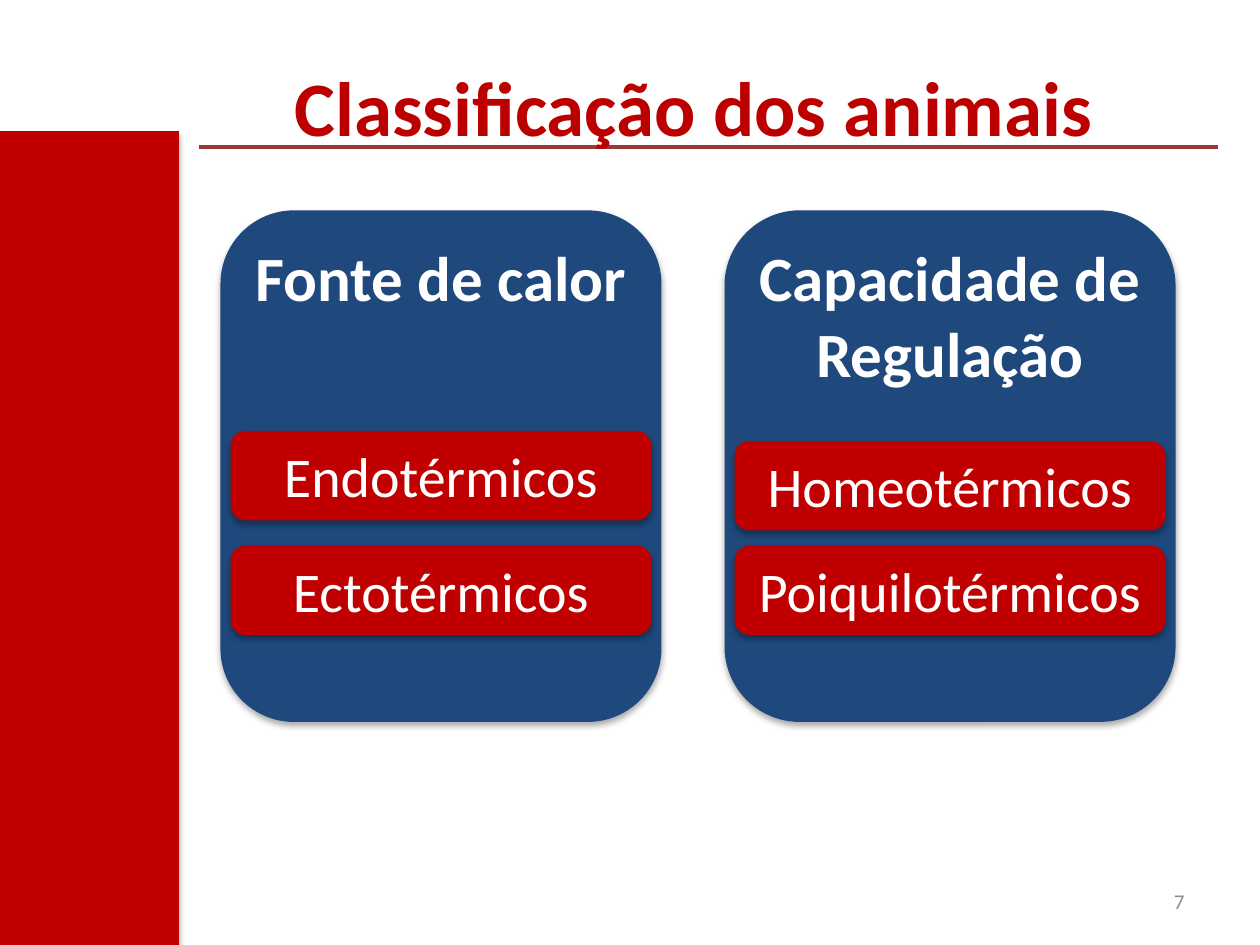
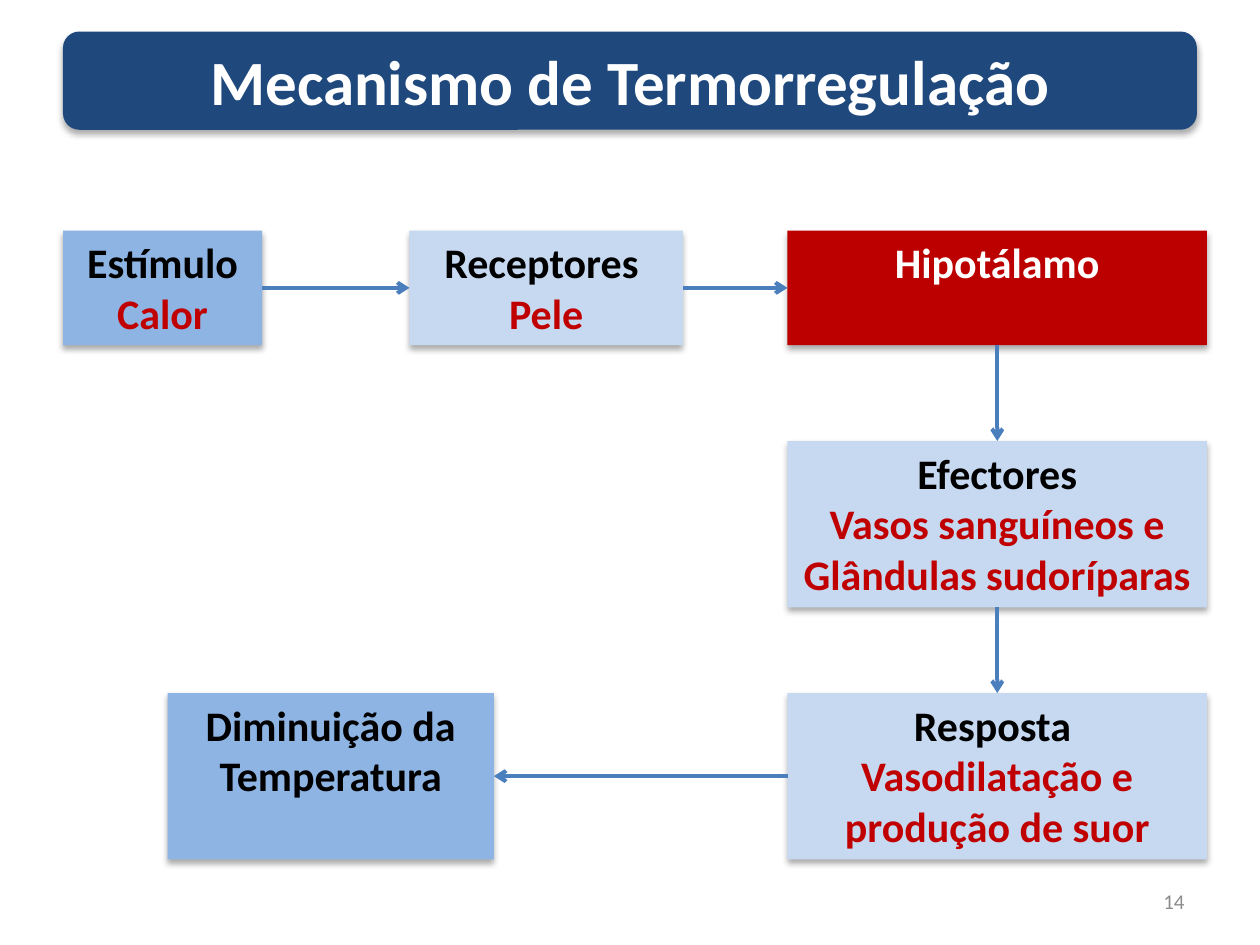
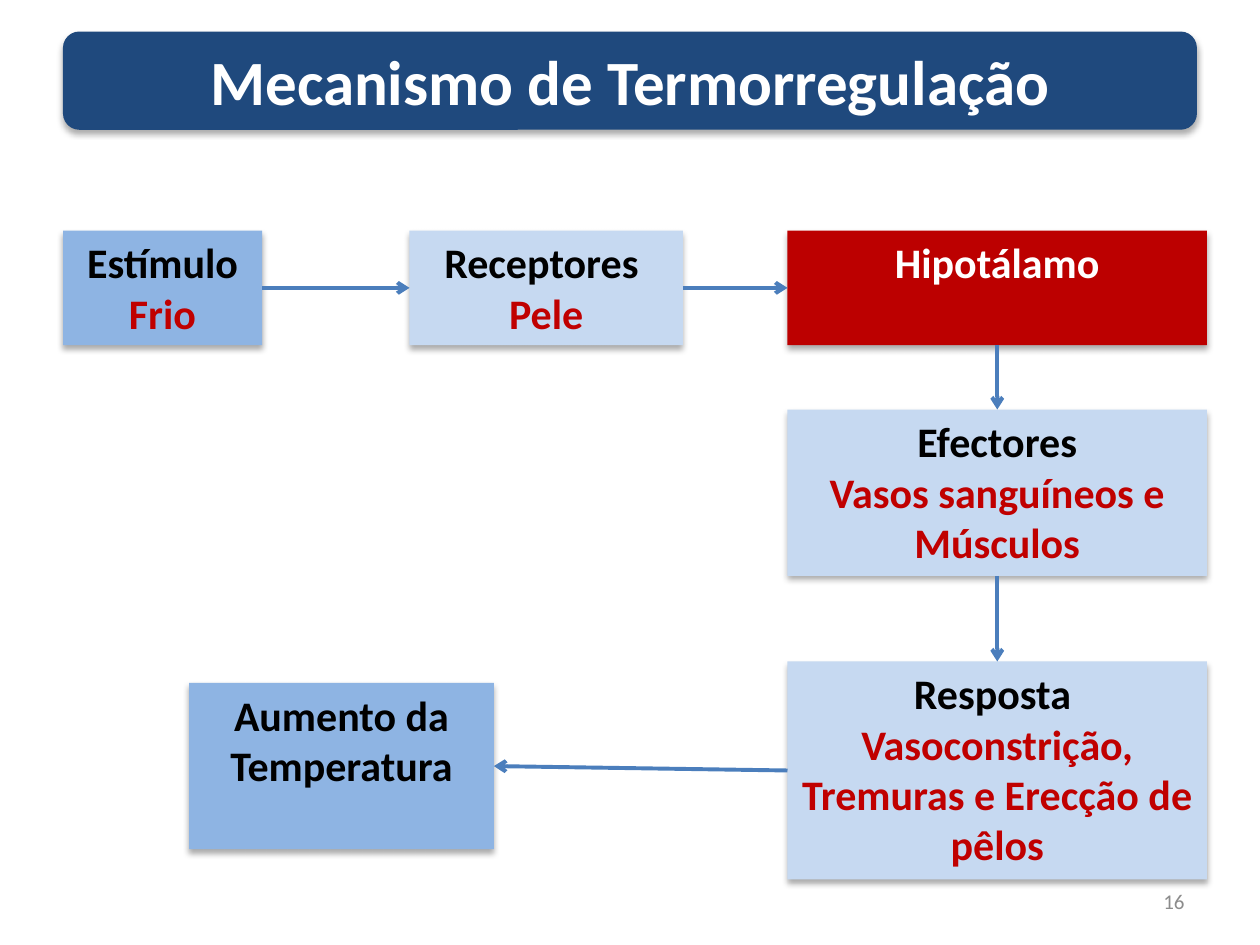
"""Build three slides on how animals regulate body heat."""
import dataclasses
import itertools

import lxml.etree
import pptx
import pptx.dml.color
import pptx.enum.shapes
import pptx.enum.text
import pptx.oxml
import pptx.oxml.ns
import pptx.util

Inches = pptx.util.Inches
Pt = pptx.util.Pt
Preset = pptx.enum.shapes.MSO_SHAPE
Align = pptx.enum.text.PP_ALIGN
Anchor = pptx.enum.text.MSO_ANCHOR


@dataclasses.dataclass(frozen=True)
class Theme:
    """Hold the colours and type sizes of the deck."""
    font: str = "Calibri"
    navy: str = "1F497D"
    red: str = "C00000"
    dark: str = "BC0000"
    sky: str = "8EB4E3"
    pale: str = "C6D9F1"
    white: str = "FFFFFF"
    black: str = "000000"
    grey: str = "8C8C8C"
    rule: str = "9B3937"
    arrow: str = "4B7EBC"
    title: int = 44
    head: int = 36
    chip: int = 32
    step: int = 24
    page: int = 12
    line: float = 2.25


THEME = Theme()
TITLE_BOX = (1.72, 0.42, 7.58, 0.84)
BAND_BOX = (0, 1.04, 1.42, 6.46)
BANNER_BOX = (0.5, 0.25, 9, 0.78)
PAGE_BOX = (7.17, 6.95, 2.33, 0.4)
FLOW_BOX = (0.5, 1.83, 9.08, 5.14)
SHADOW = (
    '<a:effectLst %s><a:outerShdw blurRad="44450" dist="27940" dir="5400000" rotWithShape="0">'
    '<a:srgbClr val="000000"><a:alpha val="32000"/></a:srgbClr></a:outerShdw></a:effectLst>'
    % pptx.oxml.ns.nsdecls("a")
)


def rgb(code):
    """Turn a hex code into a colour."""
    return pptx.dml.color.RGBColor.from_string(code)


def place(box):
    """Turn a box in inches into lengths."""
    return [Inches(part) for part in box]


def write(frame, lines, size, tints, bold=False, align=Align.CENTER, anchor=Anchor.TOP):
    """Fill a frame with lines, each in its own tint."""
    frame.text = "\n".join(lines)
    frame.word_wrap = True
    frame.auto_size = pptx.enum.text.MSO_AUTO_SIZE.NONE
    frame.vertical_anchor = anchor
    for para, tint in zip(frame.paragraphs, tints):
        para.alignment = align
        for run in para.runs:
            run.font.name = THEME.font
            run.font.size = Pt(size)
            run.font.bold = bold
            run.font.color.rgb = rgb(tint)


def panel(slide, box, tint, kind=Preset.RECTANGLE):
    """Add a filled shape with a soft shadow."""
    shape = slide.shapes.add_shape(kind, *place(box))
    shape.fill.solid()
    shape.fill.fore_color.rgb = rgb(tint)
    shape.line.fill.background()
    shape._element.spPr.append(pptx.oxml.parse_xml(SHADOW))
    return shape


def link(slide, start, end, tint):
    """Add a plain straight line between two points."""
    line = slide.shapes.add_connector(
        pptx.enum.shapes.MSO_CONNECTOR.STRAIGHT, *place(start + end))
    line.line.color.rgb = rgb(tint)
    line.line.width = Pt(THEME.line)
    lxml.etree.SubElement(line._element.spPr, pptx.oxml.ns.qn("a:effectLst"))
    return line


def arrow(slide, first, first_side, last, last_side):
    """Join two steps with an arrow."""
    line = link(slide, (0, 0), (1, 1), THEME.arrow)
    line.begin_connect(first, first_side)
    line.end_connect(last, last_side)
    lxml.etree.SubElement(line.line._get_or_add_ln(), pptx.oxml.ns.qn("a:tailEnd"), type="arrow")


def title(slide, box, text, size, tint, anchor=Anchor.TOP):
    """Put the title on top of what is drawn so far."""
    shape = slide.shapes.title
    shape.left, shape.top, shape.width, shape.height = place(box)
    write(shape.text_frame, [text], size, [tint], True, anchor=anchor)
    slide.shapes._spTree.append(shape._element)


def page(slide, box, number):
    """Write the page number."""
    frame = slide.shapes.add_textbox(*place(box)).text_frame
    write(frame, [str(number)], THEME.page, [THEME.grey],
          align=Align.RIGHT, anchor=Anchor.MIDDLE)


def card(slide, box, head, chips):
    """Draw a card with a heading and chips at given drops."""
    left, top, width, _ = box
    kind = Preset.FLOWCHART_ALTERNATE_PROCESS
    back = panel(slide, box, THEME.navy, kind)
    write(back.text_frame, [head], THEME.head, [THEME.white], True)
    for text, drop in chips:
        chip = panel(slide, (left + 0.08, top + drop, width - 0.16, 0.71), THEME.red, kind)
        write(chip.text_frame, [text], THEME.chip, [THEME.white])


def flow(slide, box, steps):
    """Draw the steps in a box and join each to the next."""
    left, top = box[:2]
    shapes = []
    for x, y, width, rows, tint, lines in steps:
        shape = panel(slide, (left + x, top + y, width, 0.09 + 0.41 * rows), tint)
        first = THEME.white if tint == THEME.dark else THEME.black
        write(shape.text_frame, lines, THEME.step, [first, THEME.red], True)
        shapes.append(shape)
    sides = [(3, 1), (3, 1), (2, 0), (2, 0), (1, 3)]
    for (one, two), (out, into) in zip(itertools.pairwise(shapes), sides):
        arrow(slide, one, out, two, into)


def class_slide(slide, number):
    """Build the slide that sorts animals."""
    link(slide, (1.58, 1.17), (9.67, 1.17), THEME.rule)
    title(slide, TITLE_BOX, "Classificação dos animais", THEME.title, THEME.dark)
    panel(slide, BAND_BOX, THEME.red)
    page(slide, PAGE_BOX, number)
    card(slide, (1.75, 1.67, 3.5, 4.06), "Fonte de calor",
         [("Endotérmicos", 1.75), ("Ectotérmicos", 2.66)])
    card(slide, (5.75, 1.67, 3.58, 4.06), "Capacidade de Regulação",
         [("Homeotérmicos", 1.83), ("Poiquilotérmicos", 2.66)])


def heat_slide(slide, number, cause, organs, action, effect, drops, end):
    """Build a slide that follows one stimulus to its effect."""
    page(slide, PAGE_BOX, number)
    panel(slide, BANNER_BOX, THEME.navy, Preset.FLOWCHART_ALTERNATE_PROCESS)
    title(slide, BANNER_BOX, "Mecanismo de Termorregulação", THEME.head,
          THEME.white, Anchor.MIDDLE)
    organ_drop, action_drop, action_rows = drops
    end_left, end_drop = end
    flow(slide, FLOW_BOX, [
        (0, 0, 1.58, 2, THEME.sky, ["Estímulo", cause]),
        (2.75, 0, 2.17, 2, THEME.pale, ["Receptores ", "Pele"]),
        (5.75, 0, 3.33, 2, THEME.dark, ["Hipotálamo"]),
        (5.75, organ_drop, 3.33, 3, THEME.pale, ["Efectores", organs]),
        (5.75, action_drop, 3.33, action_rows, THEME.pale, ["Resposta ", action]),
        (end_left, end_drop, 3.42 - end_left, 3, THEME.sky, [effect]),
    ])


def main():
    """Build and save the deck."""
    deck = pptx.Presentation()
    deck.slide_width, deck.slide_height = Inches(10), Inches(7.5)
    layout = deck.slide_layouts[5]
    class_slide(deck.slides.add_slide(layout), 7)
    heat_slide(deck.slides.add_slide(layout), 14, "Calor",
               "Vasos sanguíneos e Glândulas sudoríparas",
               "Vasodilatação e produção de suor", "Diminuição da Temperatura",
               (1.67, 3.67, 3), (0.83, 3.67))
    heat_slide(deck.slides.add_slide(layout), 16, "Frio",
               "Vasos sanguíneos e Músculos",
               "Vasoconstrição, Tremuras e Erecção de pêlos", "Aumento da Temperatura",
               (1.42, 3.42, 4), (1, 3.59))
    deck.save("out.pptx")


if __name__ == "__main__":
    main()
